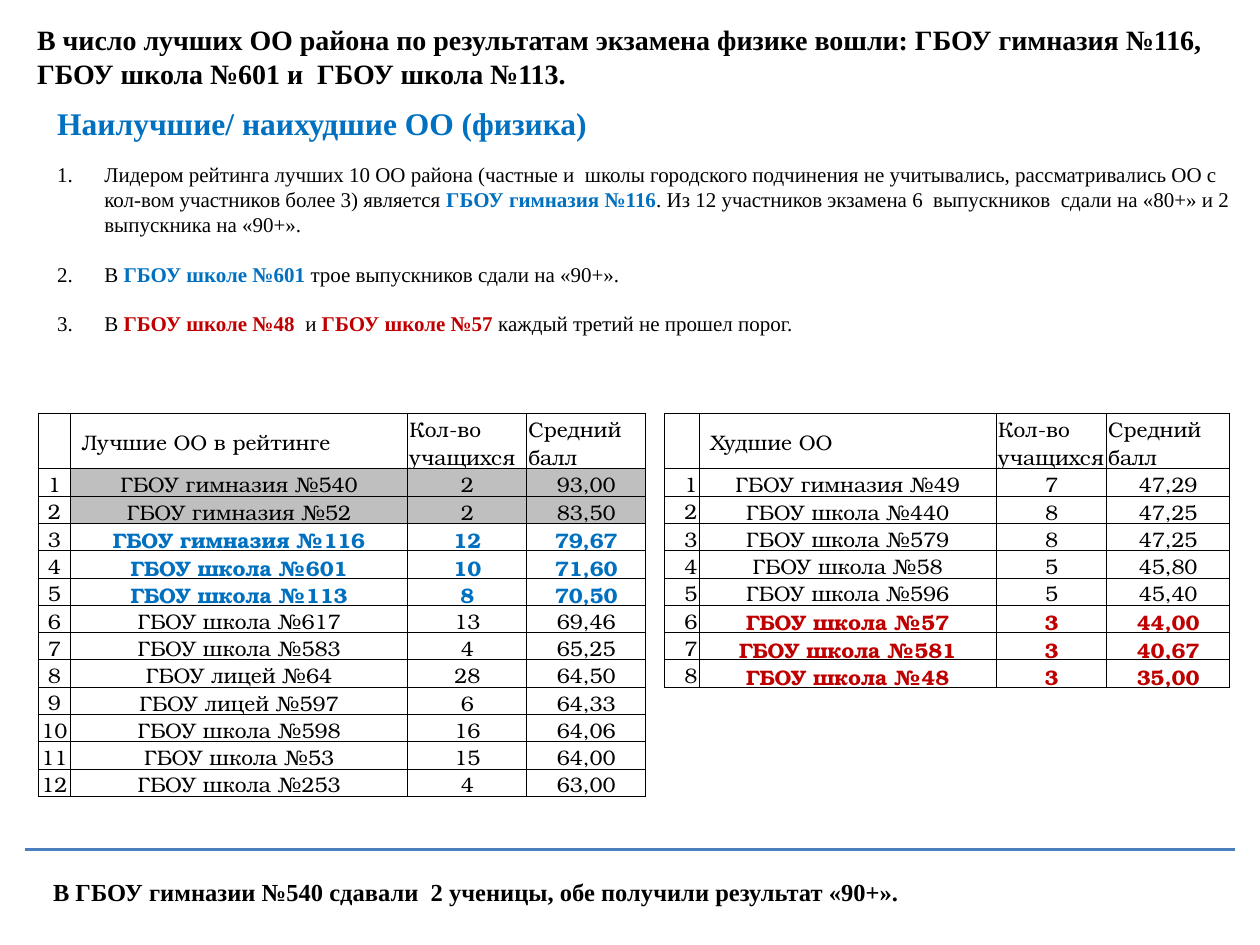
from lxml.etree import SubElement
from pptx import Presentation
from pptx.dml.color import RGBColor
from pptx.enum.shapes import MSO_CONNECTOR
from pptx.enum.text import MSO_ANCHOR as Anchor, MSO_AUTO_SIZE as AutoSize, PP_ALIGN as Align
from pptx.oxml.ns import qn
from pptx.util import Cm, Pt

COLORS = {
    "black": "000000",
    "white": "FFFFFF",
    "blue": "0070C0",
    "red": "C00000",
    "gray": "BFBFBF",
    "rule": "4B7EBC",
}
TEXT_FONT = "Times New Roman"
TABLE_FONT = "TeX Gyre Bonum"

FINDINGS = [
    [("Лидером рейтинга лучших 10 ОО района (частные и  школы городского подчинения не учитывались, "
      "рассматривались ОО с кол-вом участников более 3) является ", None),
     ("ГБОУ гимназия №116", "blue"),
     (". Из 12 участников экзамена 6  выпускников  сдали на «80+» и 2 выпускника на «90+».", None)],
    [("В ", None), ("ГБОУ школе №601 ", "blue"), ("трое выпускников сдали на «90+».", None)],
    [("В ", None), ("ГБОУ школе №48  ", "red"), ("и", None), (" ГБОУ школе №57 ", "red"),
     ("каждый третий не прошел порог.", None)],
]
BEST_SCHOOLS = [
    ("ГБОУ гимназия №540", "2", "93,00"),
    ("ГБОУ гимназия №52", "2", "83,50"),
    ("ГБОУ гимназия №116", "12", "79,67"),
    ("ГБОУ школа №601", "10", "71,60"),
    ("ГБОУ школа №113", "8", "70,50"),
    ("ГБОУ школа №617", "13", "69,46"),
    ("ГБОУ школа №583", "4", "65,25"),
    ("ГБОУ лицей №64", "28", "64,50"),
    ("ГБОУ лицей №597", "6", "64,33"),
    ("ГБОУ школа №598", "16", "64,06"),
    ("ГБОУ школа №53", "15", "64,00"),
    ("ГБОУ школа №253", "4", "63,00"),
]
WORST_SCHOOLS = [
    ("ГБОУ гимназия №49", "7", "47,29"),
    ("ГБОУ школа №440", "8", "47,25"),
    ("ГБОУ школа №579", "8", "47,25"),
    ("ГБОУ школа №58", "5", "45,80"),
    ("ГБОУ школа №596", "5", "45,40"),
    ("ГБОУ школа №57", "3", "44,00"),
    ("ГБОУ школа №581", "3", "40,67"),
    ("ГБОУ школа №48", "3", "35,00"),
]


def rgb(name):
    """Return the palette colour with the given name."""
    return RGBColor.from_string(COLORS[name])


def add_text(paragraph, text, size=12, color="black", bold=False, font=TEXT_FONT, align=Align.LEFT):
    """Add a formatted run to a paragraph."""
    paragraph.alignment = align
    run = paragraph.add_run()
    run.text = text
    run.font.size = Pt(size)
    run.font.name = font
    run.font.bold = bold
    run.font.color.rgb = rgb(color)


def prepare_frame(shape, box):
    """Place a text shape in its box and return its top-anchored, wrapping frame."""
    shape.left, shape.top, shape.width, shape.height = (Cm(length) for length in box)
    frame = shape.text_frame
    frame.word_wrap = True
    frame.auto_size = AutoSize.SHAPE_TO_FIT_TEXT
    frame.vertical_anchor = Anchor.TOP
    return frame


def add_statement(slide, box, text, size):
    """Add a bold black statement in a text box."""
    shape = slide.shapes.add_textbox(*(Cm(length) for length in box))
    add_text(prepare_frame(shape, box).paragraphs[0], text, size=size, bold=True)


def fill_title(slide, box, text):
    """Write the blue heading in the title placeholder."""
    frame = prepare_frame(slide.shapes.title, box)
    add_text(frame.paragraphs[0], text, size=18, color="blue", bold=True)


def fill_findings(slide, box):
    """Write the numbered findings in the body placeholder."""
    frame = prepare_frame(slide.placeholders[1], box)
    for index, finding in enumerate(FINDINGS):
        paragraph = frame.paragraphs[0] if index == 0 else frame.add_paragraph()
        paragraph.space_before = Pt(14 if index else 0)
        properties = paragraph._p.get_or_add_pPr()
        properties.set("marL", str(Cm(0.95)))
        properties.set("indent", str(-Cm(0.95)))
        SubElement(properties, qn("a:buFont"), typeface="+mj-lt")
        SubElement(properties, qn("a:buAutoNum"), type="arabicPeriod")
        for text, accent in finding:
            add_text(paragraph, text, color=accent or "black", bold=bool(accent))


def format_cell(cell, text, fill="white", anchor=Anchor.MIDDLE, left=0.03, **text_format):
    """Write one table cell with thin black borders."""
    cell.margin_left = Cm(left)
    cell.margin_top = cell.margin_right = Cm(0.03)
    cell.margin_bottom = 0
    cell.vertical_anchor = anchor
    properties = cell._tc.get_or_add_tcPr()
    for side in ("lnL", "lnR", "lnT", "lnB"):
        line = SubElement(properties, qn(f"a:{side}"), w=str(Pt(0.5)))
        solid = SubElement(line, qn("a:solidFill"))
        SubElement(solid, qn("a:srgbClr"), val=COLORS["black"])
    cell.fill.solid()
    cell.fill.fore_color.rgb = rgb(fill)
    if text:
        add_text(cell.text_frame.paragraphs[0], text, font=TABLE_FONT, **text_format)


def add_rating(slide, left, top, widths, heading, schools, accent, accented, shaded=(), number_align=Align.CENTER):
    """Add a rating table with accented and shaded school numbers."""
    header_height, row_height = 1.12, 0.55
    height = header_height + row_height * len(schools)
    table = slide.shapes.add_table(len(schools) + 1, len(widths), Cm(left), Cm(top),
                                   Cm(sum(widths)), Cm(height)).table
    table.first_row = table.horz_banding = False
    for column, width in zip(table.columns, widths):
        column.width = Cm(width)
    for index, row in enumerate(table.rows):
        row.height = Cm(row_height if index else header_height)

    for column, text in enumerate(("", heading, "Кол-во учащихся", "Средний балл")):
        format_cell(table.cell(0, column), text, left=0.23 if column == 1 else 0.03)
    for number, school in enumerate(schools, start=1):
        format_cell(table.cell(number, 0), str(number), anchor=Anchor.BOTTOM, align=number_align)
        for column, text in enumerate(school, start=1):
            format_cell(table.cell(number, column), text,
                        fill="gray" if number in shaded else "white",
                        color=accent if number in accented else "black",
                        bold=number in accented, align=Align.CENTER)


def add_rule(slide, left, top, width):
    """Add the horizontal line above the closing statement."""
    rule = slide.shapes.add_connector(MSO_CONNECTOR.STRAIGHT, Cm(left), Cm(top), Cm(left + width), Cm(top))
    rule.line.color.rgb = rgb("rule")
    rule.line.width = Pt(1.5)
    SubElement(rule._element.spPr, qn("a:effectLst"))


def main():
    """Build and save the slide."""
    presentation = Presentation()
    presentation.slide_width, presentation.slide_height = Cm(25.4), Cm(19.05)
    slide = presentation.slides.add_slide(presentation.slide_layouts[1])

    add_statement(slide, (0.5, 0.33, 24.23, 1.63),
                  "В число лучших ОО района по результатам экзамена физике вошли: "
                  "ГБОУ гимназия №116, ГБОУ школа №601 и  ГБОУ школа №113.", 16)
    fill_title(slide, (0.9, 1.96, 16.8, 1.02), "Наилучшие/ наихудшие ОО (физика)")
    fill_findings(slide, (0.9, 3.12, 24.15, 3.84))
    add_rating(slide, 0.77, 8.33, (0.65, 6.8, 2.4, 2.4), "Лучшие ОО в рейтинге", BEST_SCHOOLS,
               accent="blue", accented=(3, 4, 5), shaded=(1, 2))
    add_rating(slide, 13.39, 8.33, (0.7, 6, 2.22, 2.48), "Худшие ОО", WORST_SCHOOLS,
               accent="red", accented=(6, 7, 8), number_align=Align.RIGHT)
    add_rule(slide, 0.5, 17.12, 24.4)
    add_statement(slide, (0.82, 17.55, 24.23, 0.86),
                  "В ГБОУ гимназии №540 сдавали  2 ученицы, обе получили результат «90+».", 14)
    presentation.save("out.pptx")


if __name__ == "__main__":
    main()
